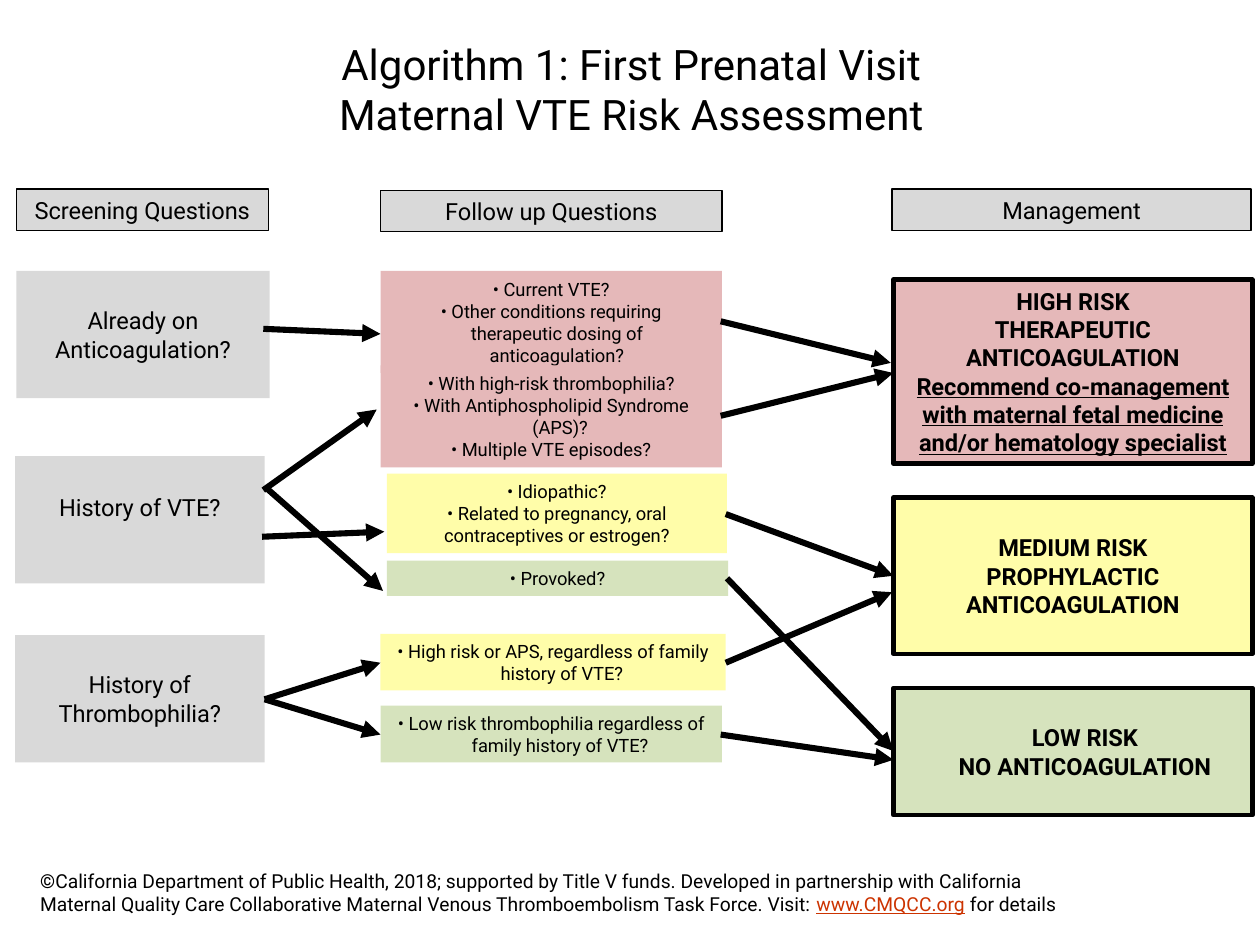
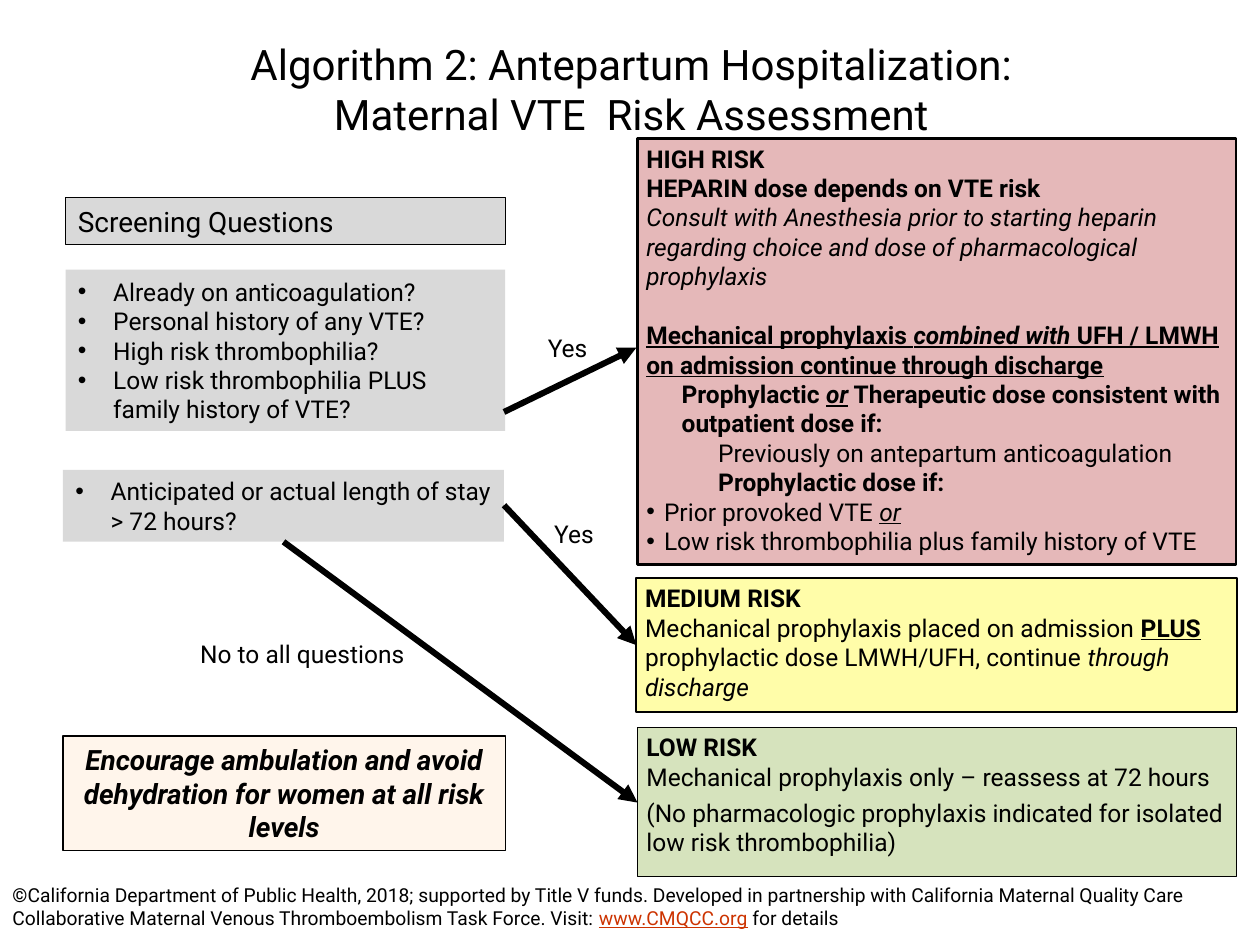
"""Build two VTE risk assessment algorithm slides."""
from dataclasses import dataclass

from lxml.etree import SubElement
from pptx import Presentation
from pptx.dml.color import RGBColor
from pptx.enum.shapes import MSO_CONNECTOR as CONN, MSO_SHAPE as SHAPE
from pptx.enum.text import MSO_ANCHOR as ANCHOR, PP_ALIGN as ALIGN
from pptx.oxml.ns import qn
from pptx.util import Inches, Pt


@dataclass(frozen=True)
class Theme:
    font: str = "Roboto"
    black: str = "000000"
    white: str = "FFFFFF"
    gray: str = "D9D9D9"
    high: str = "E5B8B9"
    medium: str = "FFFDA9"
    low: str = "D6E3BD"
    cream: str = "FFF5EB"
    link: str = "CC3300"
    title: float = 24
    heading: float = 16
    body: float = 14
    flow: float = 13.5
    footer: float = 11
    detail: float = 10.5
    arrow: float = 3.5
    frame: float = 2.5
    thin: float = 0.75


T = Theme()
STYLES = {"b": "bold", "i": "italic", "u": "underline"}
TIGHT = (0.07, 0.04, 0.07, 0.04)
LOOSE = (0.1, 0.05, 0.1, 0.05)


def assign(obj, values):
    for name, value in values.items():
        setattr(obj, name, value)


def para(*runs, **fmt):
    return runs, fmt


class Deck:
    def __init__(self):
        self.prs = Presentation()
        assign(self.prs, {"slide_width": Inches(10), "slide_height": Inches(7.5)})
        self.s = None

    def slide(self, title):
        self.s = self.prs.slides.add_slide(self.prs.slide_layouts[5])
        sp = self.s.shapes.title
        box = dict(zip(("left", "top", "width", "height"), map(Inches, (0.52, 0.33, 8.98, 0.75))))
        assign(sp, box)
        self.fill_text(sp.text_frame, [title], T.title, ALIGN.CENTER, ANCHOR.MIDDLE, LOOSE)

    def fill_text(self, tf, paras, size, align, anchor, insets):
        sides = ("margin_left", "margin_top", "margin_right", "margin_bottom")
        assign(tf, {"word_wrap": True, "vertical_anchor": anchor, **dict(zip(sides, map(Inches, insets)))})
        for i, item in enumerate(paras):
            runs, fmt = ((item,), {}) if isinstance(item, str) else item
            p = tf.paragraphs[0] if i == 0 else tf.add_paragraph()
            assign(p, {"alignment": align, "space_before": Pt(fmt.get("before", 0)),
                       "space_after": Pt(fmt.get("after", 0))})
            self.indent(p, **fmt)
            for run in runs:
                text, style, color = (*((run,) if isinstance(run, str) else run), "", T.black)[:3]
                self.add_text(p, text, size, style, color or T.black)

    def indent(self, p, left=0, hang=0, bullet=False, **_):
        pPr = p._p.get_or_add_pPr()
        pPr.set("marL", str(Inches(left)))
        pPr.set("indent", str(Inches(-hang)))
        if bullet:
            SubElement(pPr, qn("a:buFont")).set("typeface", "Arial")
            SubElement(pPr, qn("a:buChar")).set("char", "•")

    def add_text(self, p, text, size, style, color):
        for i, line in enumerate(text.split("\n")):
            if i:
                p.add_line_break()
            r = p.add_run()
            r.text = line
            assign(r.font, {"name": T.font, "size": Pt(size),
                            **{name: key in style for key, name in STYLES.items()}})
            r.font.color.rgb = RGBColor.from_string(color)

    def box(self, at, fill, paras, size, line=0, align=ALIGN.CENTER, anchor=ANCHOR.MIDDLE, insets=LOOSE):
        sp = self.s.shapes.add_shape(SHAPE.RECTANGLE, *map(Inches, at))
        sp.shadow.inherit = False
        sp.fill.solid()
        sp.fill.fore_color.rgb = RGBColor.from_string(fill)
        if line:
            sp.line.width = Pt(line)
            sp.line.color.rgb = RGBColor.from_string(T.black)
        else:
            sp.line.fill.background()
        self.fill_text(sp.text_frame, paras, size, align, anchor, insets)

    def panel(self, at, fill, paras, line):
        self.box(at, fill, paras, T.body, line, ALIGN.LEFT, ANCHOR.TOP, TIGHT)

    def label(self, at, text):
        self.box(at, T.white, [text], T.body, anchor=ANCHOR.TOP, insets=TIGHT)

    def arrow(self, *ends):
        c = self.s.shapes.add_connector(CONN.STRAIGHT, *map(Inches, ends))
        c.line.width = Pt(T.arrow)
        c.line.color.rgb = RGBColor.from_string(T.black)
        spPr = c.element.spPr
        SubElement(spPr.find(qn("a:ln")), qn("a:tailEnd")).set("type", "triangle")
        SubElement(spPr, qn("a:effectLst"))

    def footer(self, left, top, width):
        tf = self.s.shapes.add_textbox(*map(Inches, (left, top, width, 0.47))).text_frame
        credit = para(
            ("©", "b"),
            "California Department of Public Health, 2018; supported by Title V funds. "
            "Developed in partnership with California Maternal Quality Care Collaborative "
            "Maternal Venous Thromboembolism Task Force. Visit: ",
            ("www.CMQCC.org", "u", T.link), " for details")
        self.fill_text(tf, [credit], T.footer, ALIGN.LEFT, ANCHOR.TOP, LOOSE)


def prenatal_visit(deck):
    deck.slide("Algorithm 1: First Prenatal Visit\nMaternal VTE Risk Assessment")
    headers = [(0.13, 1.5, 2, "Screening Questions"), (3.02, 1.51, 2.71, "Follow up Questions"),
               (7.08, 1.5, 2.85, "Management")]
    for left, top, width, text in headers:
        deck.box((left, top, width, 0.33), T.gray, [text], T.flow, T.thin)

    raised = (0.1, 0.05, 0.1, 0.25)
    questions = [(0.13, 2.15, 2.01, "Already on Anticoagulation?", LOOSE),
                 (0.12, 3.62, 1.98, "History of VTE?", raised),
                 (0.12, 5.04, 1.98, "History of Thrombophilia?", LOOSE)]
    for left, top, width, text, insets in questions:
        deck.box((left, top, width, 1.01), T.gray, [text], T.flow, insets=insets)

    follow_ups = [
        ((3.02, 2.15, 2.71, 0.81), T.high, 0.09,
         ["Current VTE?", "Other conditions requiring therapeutic dosing of anticoagulation?"]),
        ((3.02, 2.9, 2.71, 0.81), T.high, 0.14,
         ["With high-risk thrombophilia?", "With Antiphospholipid Syndrome (APS)?",
          "Multiple VTE episodes?"]),
        ((3.07, 3.76, 2.7, 0.63), T.medium, 0,
         ["Idiopathic?", "Related to pregnancy, oral contraceptives or estrogen?"]),
        ((3.07, 4.45, 2.71, 0.28), T.low, 0, ["Provoked?"]),
        ((3.02, 5.03, 2.74, 0.45), T.medium, 0.14,
         ["High risk or APS, regardless of family history of VTE?"]),
        ((3.02, 5.6, 2.71, 0.45), T.low, 0.14,
         ["Low risk thrombophilia regardless of family history of VTE?"]),
    ]
    for at, fill, hang, lines in follow_ups:
        deck.box(at, fill, [para(f"• {text}", left=hang, hang=hang) for text in lines], T.detail)

    outcomes = [
        (2.22, 1.46, T.high, 0,
         [("HIGH RISK", "b"), ("THERAPEUTIC ANTICOAGULATION", "b"),
          ("Recommend co-management with maternal fetal medicine and/or hematology specialist", "bu")]),
        (3.95, 1.24, T.medium, 0, [("MEDIUM RISK", "b"), ("PROPHYLACTIC ANTICOAGULATION", "b")]),
        (5.46, 1.01, T.low, 0.19, [("LOW RISK", "b"), ("NO ANTICOAGULATION", "b")]),
    ]
    for top, height, fill, left, lines in outcomes:
        deck.box((7.09, top, 2.85, height), fill, [para(run, left=left) for run in lines], T.flow, T.frame)

    to_management = [(5.76, 4.08, 7.09, 4.57), (5.72, 2.55, 7.07, 2.88), (5.77, 4.59, 7.09, 5.96),
                     (5.76, 5.26, 7.08, 4.7), (5.72, 3.3, 7.09, 2.96), (5.72, 5.83, 7.09, 6.03)]
    to_follow_up = [(2.09, 2.61, 3.02, 2.65), (2.09, 3.89, 2.99, 3.25), (2.11, 3.87, 3.04, 4.69),
                    (2.08, 4.26, 3.05, 4.22), (2.1, 5.55, 3.02, 5.26), (2.1, 5.55, 3.02, 5.83)]
    for ends in to_management + to_follow_up:
        deck.arrow(*ends)
    deck.footer(0.22, 6.85, 8.33)


def antepartum_hospitalization(deck):
    deck.slide("Algorithm 2: Antepartum Hospitalization:\nMaternal VTE  Risk Assessment")
    deck.box((0.52, 1.57, 3.49, 0.37), T.gray, ["Screening Questions"], T.heading, T.thin, ALIGN.LEFT)
    screening = [
        ((0.52, 2.14, 3.49, 1.28),
         ["Already on anticoagulation?", "Personal history of any VTE?", "High risk thrombophilia?",
          "Low risk thrombophilia PLUS family history of VTE?"]),
        ((0.5, 3.73, 3.5, 0.57), ["Anticipated or actual length of stay > 72 hours?"]),
    ]
    for at, lines in screening:
        items = [para(text, left=0.28, hang=0.28, bullet=True) for text in lines]
        deck.box(at, T.gray, items, T.body, align=ALIGN.LEFT)
    advice = "Encourage ambulation and avoid dehydration for women at all risk levels"
    deck.box((0.5, 5.84, 3.51, 0.91), T.cream, [para((advice, "bi"))], T.heading, T.thin)

    item = {"left": 0.14, "hang": 0.14, "bullet": True}
    deck.panel((5.06, 1.1, 4.75, 3.38), T.high, [
        para(("HIGH RISK", "b")),
        para(("HEPARIN dose depends on VTE risk", "b")),
        para(("Consult with Anesthesia prior to starting heparin regarding choice and dose of "
              "pharmacological prophylaxis", "i")),
        para(("Mechanical prophylaxis ", "bu"), ("combined with", "biu"),
             (" UFH / LMWH on admission continue through discharge", "bu"), before=16.8),
        para(("Prophylactic ", "b"), ("or", "biu"),
             (" Therapeutic dose consistent with outpatient dose if:", "b"), left=0.28),
        para("Previously on antepartum anticoagulation", left=0.57),
        para(("Prophylactic dose if:", "b"), left=0.57),
        para("Prior provoked VTE ", ("or", "iu"), **item),
        para("Low risk thrombophilia plus family history of VTE", **item),
    ], 1.5)
    deck.panel((5.05, 4.59, 4.77, 1.06), T.medium, [
        para(("MEDIUM RISK", "b")),
        para("Mechanical prophylaxis placed on admission ", ("PLUS", "bu"),
             " prophylactic dose LMWH/UFH, continue ", ("through discharge", "i")),
    ], 1)
    deck.panel((5.06, 5.77, 4.75, 1.19), T.low, [
        para(("LOW RISK", "b")),
        para("Mechanical prophylaxis only – reassess at 72 hours", after=3.8),
        para("(No pharmacologic prophylaxis indicated for isolated low risk thrombophilia)"),
    ], 0.5)

    for at, text in [((4.27, 2.6, 0.47, 0.28), "Yes"), ((4.21, 4.08, 0.69, 0.49), "Yes"),
                     ((1.51, 5.03, 1.78, 0.25), "No to all questions")]:
        deck.label(at, text)
    for ends in [(4, 3.27, 5.05, 2.76), (4, 4.01, 5.05, 5.12), (2.25, 4.3, 5.06, 6.37)]:
        deck.arrow(*ends)
    deck.footer(0, 6.96, 9.69)


def main():
    deck = Deck()
    prenatal_visit(deck)
    antepartum_hospitalization(deck)
    deck.prs.save("out.pptx")


if __name__ == "__main__":
    main()
